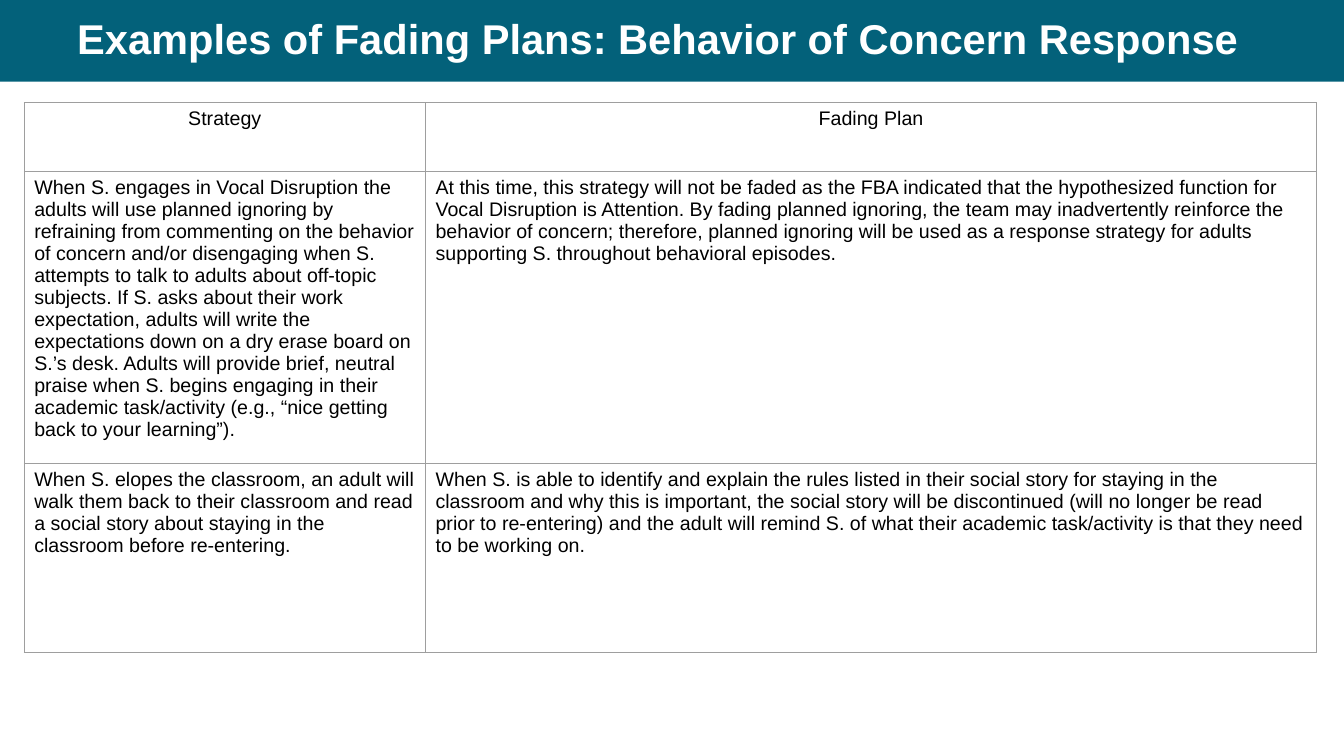
from lxml import etree
from pptx import Presentation
from pptx import util as u
from pptx.dml.color import RGBColor
from pptx.enum import shapes, text
from pptx.oxml import ns

WIDE, HIGH = 13.33, 7.5
TEAL = RGBColor(0x03, 0x61, 0x7A)
WHITE = RGBColor(0xFF, 0xFF, 0xFF)
BLACK = RGBColor(0x00, 0x00, 0x00)
GREY = RGBColor(0x9E, 0x9E, 0x9E)
MID, LEFT = text.PP_ALIGN.CENTER, text.PP_ALIGN.LEFT

TITLE = "Examples of Fading Plans: Behavior of Concern Response"
HEADS = ["Strategy", "Fading Plan"]
PLANS = [
    ["When S. engages in Vocal Disruption the adults will use planned ignoring by "
     "refraining from commenting on the behavior of concern and/or disengaging when S. "
     "attempts to talk to adults about off-topic subjects. If S. asks about their work "
     "expectation, adults will write the expectations down on a dry erase board on S.’s "
     "desk. Adults will provide brief, neutral praise when S. begins engaging in their "
     "academic task/activity (e.g., “nice getting back to your learning”).",
     "At this time, this strategy will not be faded as the FBA indicated that the "
     "hypothesized function for Vocal Disruption is Attention. By fading planned ignoring, "
     "the team may inadvertently reinforce the behavior of concern; therefore, planned "
     "ignoring will be used as a response strategy for adults supporting S. throughout "
     "behavioral episodes."],
    ["When S. elopes the classroom, an adult will walk them back to their classroom and "
     "read a social story about staying in the classroom before re-entering.",
     "When S. is able to identify and explain the rules listed in their social story for "
     "staying in the classroom and why this is important, the social story will be "
     "discontinued (will no longer be read prior to re-entering) and the adult will remind "
     "S. of what their academic task/activity is that they need to be working on."],
]


def write(frame, words, size=14, color=BLACK, bold=False, align=LEFT, lead=None):
    para = frame.paragraphs[0]
    para.alignment = align
    if lead:
        para.line_spacing = lead
    run = para.add_run()
    run.text = words
    font = run.font
    font.name, font.size, font.bold = "Arial", u.Pt(size), bold
    font.color.rgb = color


class Deck:
    """Hold the style and the current slide, with lengths as shares of its size."""

    def __init__(self, face="Arial"):
        self.show = Presentation()
        self.show.slide_width, self.show.slide_height = u.Inches(WIDE), u.Inches(HIGH)
        self.slide = self.show.slides.add_slide(self.show.slide_layouts[6])

    def span(self, x, y, w, h):
        wide, high = self.show.slide_width, self.show.slide_height
        return int(x * wide), int(y * high), int(w * wide), int(h * high)

    def band(self, area, color):
        bar = self.slide.shapes.add_shape(shapes.MSO_SHAPE.RECTANGLE, *self.span(*area))
        bar.shadow.inherit = False
        bar.fill.solid()
        bar.fill.fore_color.rgb = color
        bar.line.fill.background()

    def label(self, area, words, **style):
        frame = self.slide.shapes.add_textbox(*self.span(*area)).text_frame
        frame.word_wrap = True
        frame.vertical_anchor = text.MSO_ANCHOR.MIDDLE
        write(frame, words, **style)

    def edge(self, cell):
        props = cell._tc.get_or_add_tcPr()
        for spot, side in enumerate(("a:lnL", "a:lnR", "a:lnT", "a:lnB")):
            line = etree.Element(ns.qn(side), w=str(u.Pt(0.75)))
            fill = etree.SubElement(line, ns.qn("a:solidFill"))
            etree.SubElement(fill, ns.qn("a:srgbClr"), val=str(GREY))
            props.insert(spot, line)

    def table(self, area, cols, rows, data):
        grid = self.slide.shapes.add_table(len(rows), len(cols), *self.span(*area)).table
        grid.horz_banding = grid.first_row = False
        for col, share in zip(grid.columns, cols):
            col.width = int(share * self.show.slide_width)
        for row, share in zip(grid.rows, rows):
            row.height = int(share * self.show.slide_height)
        for r, line in enumerate(data):
            for c, words in enumerate(line):
                cell = grid.cell(r, c)
                cell.fill.background()
                self.edge(cell)
                write(cell.text_frame, words, align=LEFT if r else MID)

    def save(self):
        self.show.save("out.pptx")


def main():
    deck = Deck()
    top = 0.81 / HIGH
    deck.band((0, 0, 1, top), TEAL)
    deck.label((0.37 / WIDE, 0, 12.32 / WIDE, top), TITLE,
               size=29.7, color=WHITE, bold=True, align=MID, lead=0.9)
    cols = [3.98 / WIDE, 8.84 / WIDE]
    rows = [0.68 / HIGH, 2.72 / HIGH, 1.87 / HIGH]
    deck.table((0.24 / WIDE, 1.02 / HIGH, sum(cols), sum(rows)), cols, rows, [HEADS] + PLANS)
    deck.save()


if __name__ == "__main__":
    main()
